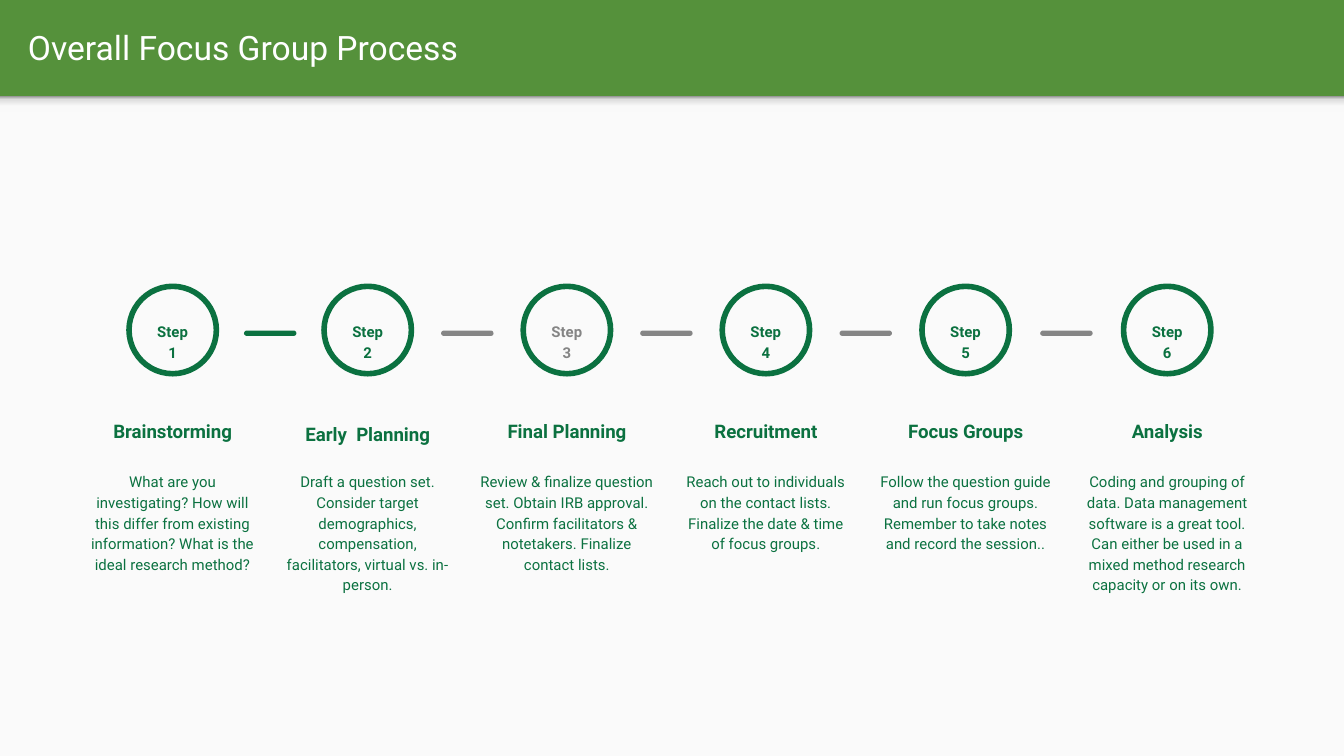
from copy import deepcopy
from dataclasses import dataclass

from pptx import Presentation
from pptx.dml.color import RGBColor
from pptx.enum import shapes, text
from pptx.util import Pt


@dataclass(frozen=True)
class Theme:
    font: str = "Roboto"
    band: str = "55913B"
    paper: str = "FAFAFA"
    white: str = "FFFFFF"
    green: str = "0B7140"
    grey: str = "858585"
    title_size: int = 18
    heading_size: int = 10
    body_size: int = 8


THEME = Theme()
TITLE = "Overall Focus Group Process"
SHADOW_STOPS = [(0, "F9F9F9"), (0.36, "F9F9F9"), (0.8, "DEDEDE"), (1, "999999")]

# heading, description, column centre, column width, step label colour
STEPS = [
    ("Brainstorming",
     "What are you investigating? How will this differ from existing "
     "information? What is the ideal research method?",
     92.5, 103, THEME.green),
    ("Early  Planning",
     "Draft a question set. Consider target demographics, compensation, "
     "facilitators, virtual vs. in-person.",
     197, 103, THEME.green),
    ("Final Planning",
     "Review & finalize question set. Obtain IRB approval. Confirm "
     "facilitators & notetakers. Finalize contact lists.",
     303.7, 107.3, THEME.grey),
    ("Recruitment",
     "Reach out to individuals on the contact lists. Finalize the date & "
     "time of focus groups.",
     410.3, 103, THEME.green),
    ("Focus Groups",
     "Follow the question guide and run focus groups. Remember to take "
     "notes and record the session..",
     517.3, 107.3, THEME.green),
    ("Analysis",
     "Coding and grouping of data. Data management software is a great tool. "
     "Can either be used in a mixed method research capacity or on its own.",
     625.3, 107.3, THEME.green),
]

WIDTH, HEIGHT = 720, 405
BAND_HEIGHT = 51.6
SHADOW_HEIGHT = 8.6
CIRCLE, CIRCLE_TOP = 46.8, 153.4
LABEL_WIDTH, LABEL_TOP, LABEL_HEIGHT = 34.3, 164.2, 25.2
HEADING_TOP, HEADING_HEIGHT = 208.8, 35.3
HEADING_DROP = {"Early  Planning": 1.5}
BODY_TOP, BODY_HEIGHT = 244.8, 58.3
DASH_WIDTH, DASH_HEIGHT, DASH_TOP = 28.1, 2.9, 177.1


def rgb(value):
    return RGBColor.from_string(value)


def add_shape(parent, kind, left, top, width, height, fill=None, line=None):
    shape = parent.add_shape(kind, Pt(left), Pt(top), Pt(width), Pt(height))
    shape.shadow.inherit = False
    if fill:
        shape.fill.solid()
        shape.fill.fore_color.rgb = rgb(fill)
    else:
        shape.fill.background()
    if line:
        shape.line.color.rgb = rgb(line)
        shape.line.width = Pt(3)
    else:
        shape.line.fill.background()
    return shape


def add_text(parent, words, left, top, width, height, size, color, bold=False,
             anchor=text.MSO_ANCHOR.TOP, align=text.PP_ALIGN.CENTER, spacing=1.15):
    box = parent.add_textbox(Pt(left), Pt(top), Pt(width), Pt(height))
    frame = box.text_frame
    frame.word_wrap = True
    frame.vertical_anchor = anchor
    frame.margin_left = frame.margin_right = Pt(7.2)
    frame.margin_top = frame.margin_bottom = Pt(7.2)
    paragraph = frame.paragraphs[0]
    paragraph.text = words
    paragraph.alignment = align
    paragraph.line_spacing = spacing
    font = paragraph.font
    font.name, font.size, font.bold = THEME.font, Pt(size), bold
    font.color.rgb = rgb(color)


def fade_upwards(shape, stops):
    """Fill the shape with a gradient whose first stop is at the bottom."""
    shape.fill.gradient()
    shape.fill.gradient_angle = 90
    first, last = shape.fill.gradient_stops
    stop_list = first._gs.getparent()
    for _ in stops[2:]:
        stop_list.append(deepcopy(last._gs))
    for stop, (position, color) in zip(shape.fill.gradient_stops, stops):
        stop.position = position
        stop.color.rgb = rgb(color)


def add_step(slide, number, step):
    heading, body, centre, width, label_color = step
    group = slide.shapes.add_group_shape().shapes
    left = centre - width / 2
    add_shape(group, shapes.MSO_SHAPE.OVAL, centre - CIRCLE / 2, CIRCLE_TOP,
              CIRCLE, CIRCLE, line=THEME.green)
    add_text(group, f"Step {number}", centre - LABEL_WIDTH / 2, LABEL_TOP,
             LABEL_WIDTH, LABEL_HEIGHT, THEME.body_size, label_color, bold=True)
    add_text(group, heading, left, HEADING_TOP + HEADING_DROP.get(heading, 0),
             width, HEADING_HEIGHT, THEME.heading_size, THEME.green, bold=True,
             anchor=text.MSO_ANCHOR.BOTTOM)
    add_text(group, body, left, BODY_TOP, width, BODY_HEIGHT,
             THEME.body_size, THEME.green)


def add_dash(slide, centre, color):
    dash = add_shape(slide.shapes, shapes.MSO_SHAPE.ROUNDED_RECTANGLE,
                     centre - DASH_WIDTH / 2, DASH_TOP, DASH_WIDTH, DASH_HEIGHT,
                     fill=color)
    dash.adjustments[0] = 0.5


def main():
    deck = Presentation()
    deck.slide_width, deck.slide_height = Pt(WIDTH), Pt(HEIGHT)
    slide = deck.slides.add_slide(deck.slide_layouts[6])
    slide.background.fill.solid()
    slide.background.fill.fore_color.rgb = rgb(THEME.band)

    rectangle = shapes.MSO_SHAPE.RECTANGLE
    add_shape(slide.shapes, rectangle, 0, BAND_HEIGHT, WIDTH,
              HEIGHT - BAND_HEIGHT, fill=THEME.paper)
    shadow = add_shape(slide.shapes, rectangle, 0, BAND_HEIGHT, WIDTH, SHADOW_HEIGHT)
    fade_upwards(shadow, SHADOW_STOPS)
    add_text(slide.shapes, TITLE, 7.9, 1.4, 694.8, 47.5, THEME.title_size,
             THEME.white, anchor=text.MSO_ANCHOR.MIDDLE,
             align=text.PP_ALIGN.LEFT, spacing=1)

    for number, step in enumerate(STEPS, 1):
        add_step(slide, number, step)
    centres = [step[2] for step in STEPS]
    for index, (before, after) in enumerate(zip(centres, centres[1:])):
        add_dash(slide, (before + after) / 2, THEME.grey if index else THEME.green)

    deck.save("out.pptx")


if __name__ == "__main__":
    main()
